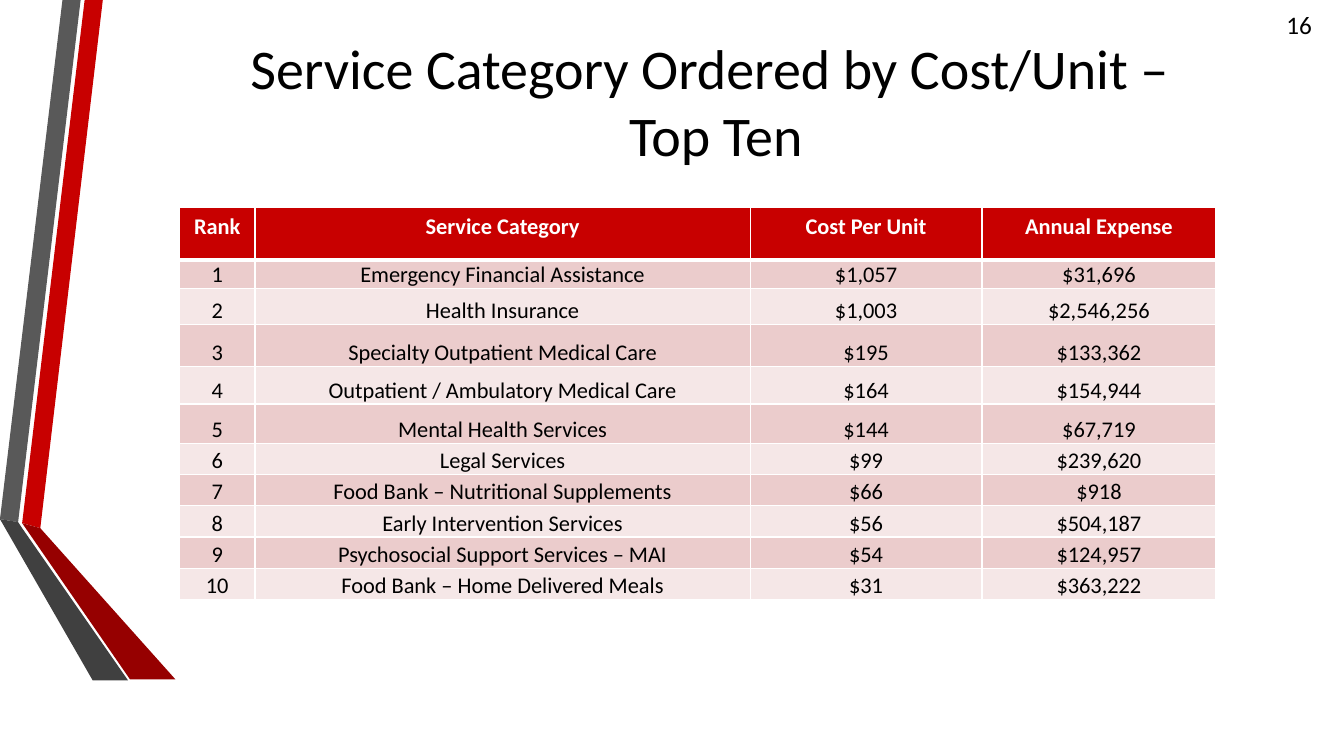
from dataclasses import dataclass

from lxml.etree import SubElement
from pptx import Presentation
from pptx.dml.color import RGBColor
from pptx.enum.text import MSO_ANCHOR, PP_ALIGN
from pptx.oxml.ns import qn
from pptx.util import Inches, Pt


@dataclass(frozen=True)
class Theme:
    font: str = "Calibri"
    ink: str = "000000"
    white: str = "FFFFFF"
    red: str = "C80000"
    dark_red: str = "960000"
    gray: str = "595959"
    dark_gray: str = "404040"
    bands: tuple = ("EBCCCC", "F5E7E7")
    title_size: int = 40
    number_size: int = 18
    table_size: int = 16
    rule: float = 1
    header_rule: float = 3


HEADINGS = ("Rank", "Service Category", "Cost Per Unit", "Annual Expense")
SERVICES = (
    ("Emergency Financial Assistance", "$1,057", "$31,696"),
    ("Health Insurance", "$1,003", "$2,546,256"),
    ("Specialty Outpatient Medical Care", "$195", "$133,362"),
    ("Outpatient / Ambulatory Medical Care", "$164", "$154,944"),
    ("Mental Health Services", "$144", "$67,719"),
    ("Legal Services", "$99", "$239,620"),
    ("Food Bank – Nutritional Supplements", "$66", "$918"),
    ("Early Intervention Services", "$56", "$504,187"),
    ("Psychosocial Support Services – MAI", "$54", "$124,957"),
    ("Food Bank – Home Delivered Meals", "$31", "$363,222"),
)
COLUMN_WIDTHS = (0.75, 4.91, 2.3, 2.32)
ROW_HEIGHTS = (0.52, 0.28, 0.36, 0.42, 0.37, 0.39) + (0.31,) * 5


class SlideBuilder:
    def __init__(self, slide, theme):
        self.slide = slide
        self.theme = theme

    def style(self, paragraph, size, color, bold=False, align=PP_ALIGN.LEFT):
        paragraph.alignment = align
        font = paragraph.font
        font.name, font.size, font.bold = self.theme.font, Pt(size), bold
        font.color.rgb = RGBColor.from_string(color)

    def ribbon(self, points, color):
        start, *rest = [(Inches(x), Inches(y)) for x, y in points]
        outline = self.slide.shapes.build_freeform(*start)
        outline.add_line_segments(rest, close=True)
        band = outline.convert_to_shape()
        band.shadow.inherit = False
        band.fill.solid()
        band.fill.fore_color.rgb = RGBColor.from_string(color)
        band.line.fill.background()

    def text(self, words, box, size, align=PP_ALIGN.LEFT, anchor=MSO_ANCHOR.TOP):
        frame = self.slide.shapes.add_textbox(*map(Inches, box)).text_frame
        frame.word_wrap = True
        frame.vertical_anchor = anchor
        frame.paragraphs[0].text = words
        self.style(frame.paragraphs[0], size, self.theme.ink, align=align)

    def borders(self, cell, **widths):
        properties = cell._tc.get_or_add_tcPr()
        for side in "LRTB":
            width = widths.get(side, self.theme.rule)
            line = SubElement(properties, qn(f"a:ln{side}"), w=str(Pt(width)))
            fill = SubElement(line, qn("a:solidFill"))
            SubElement(fill, qn("a:srgbClr"), val=self.theme.white)

    def header_cell(self, cell):
        self.borders(cell, B=self.theme.header_rule)
        self.paint(cell, self.theme.red, self.theme.white, bold=True)

    def body_cell(self, cell, row):
        top = self.theme.header_rule if row == 1 else self.theme.rule
        self.borders(cell, T=top)
        cell.margin_left = cell.margin_right = 0
        cell.margin_top = cell.margin_bottom = 0
        cell.vertical_anchor = MSO_ANCHOR.BOTTOM
        self.paint(cell, self.theme.bands[(row - 1) % 2], self.theme.ink)

    def paint(self, cell, fill, color, bold=False):
        cell.fill.solid()
        cell.fill.fore_color.rgb = RGBColor.from_string(fill)
        self.style(cell.text_frame.paragraphs[0], self.theme.table_size, color,
                   bold, PP_ALIGN.CENTER)

    def table(self, rows, left, top, widths, heights):
        grid = self.slide.shapes.add_table(
            len(rows), len(widths), Inches(left), Inches(top),
            Inches(sum(widths)), Inches(sum(heights))).table
        for column, width in zip(grid.columns, widths):
            column.width = Inches(width)
        for r, (values, height) in enumerate(zip(rows, heights)):
            grid.rows[r].height = Inches(height)
            for c, value in enumerate(values):
                cell = grid.cell(r, c)
                cell.text = value
                if r == 0:
                    self.header_cell(cell)
                else:
                    self.body_cell(cell, r)


def main():
    deck = Presentation()
    deck.slide_width, deck.slide_height = Inches(13.33), Inches(7.5)
    theme = Theme()
    page = SlideBuilder(deck.slides.add_slide(deck.slide_layouts[6]), theme)

    # Folded ribbons down the left edge
    page.ribbon([(0.22, 5.19), (0.4, 5.24), (1.02, 0), (0.84, 0)], theme.red)
    page.ribbon([(0.8, 0), (0.62, 0), (0, 5.15), (0.18, 5.18)], theme.gray)
    page.ribbon([(0.22, 5.19), (1.29, 6.74), (1.74, 6.74), (0.4, 5.24)],
                theme.dark_red)
    page.ribbon([(1.27, 6.75), (0.22, 5.24), (0.18, 5.18), (0, 5.15), (0.92, 6.75)],
                theme.dark_gray)

    # Page number and title
    page.text("16", (12.66, 0.04, 0.67, 0.4), theme.number_size)
    page.text("Service Category Ordered by Cost/Unit – \vTop Ten",
              (1.62, 0.04, 10.96, 1.92), theme.title_size,
              PP_ALIGN.CENTER, MSO_ANCHOR.MIDDLE)

    # Ranking table
    ranking = [(str(rank), *service) for rank, service in enumerate(SERVICES, 1)]
    page.table([HEADINGS, *ranking], 1.78, 2.06, COLUMN_WIDTHS, ROW_HEIGHTS)

    deck.save("out.pptx")


if __name__ == "__main__":
    main()
